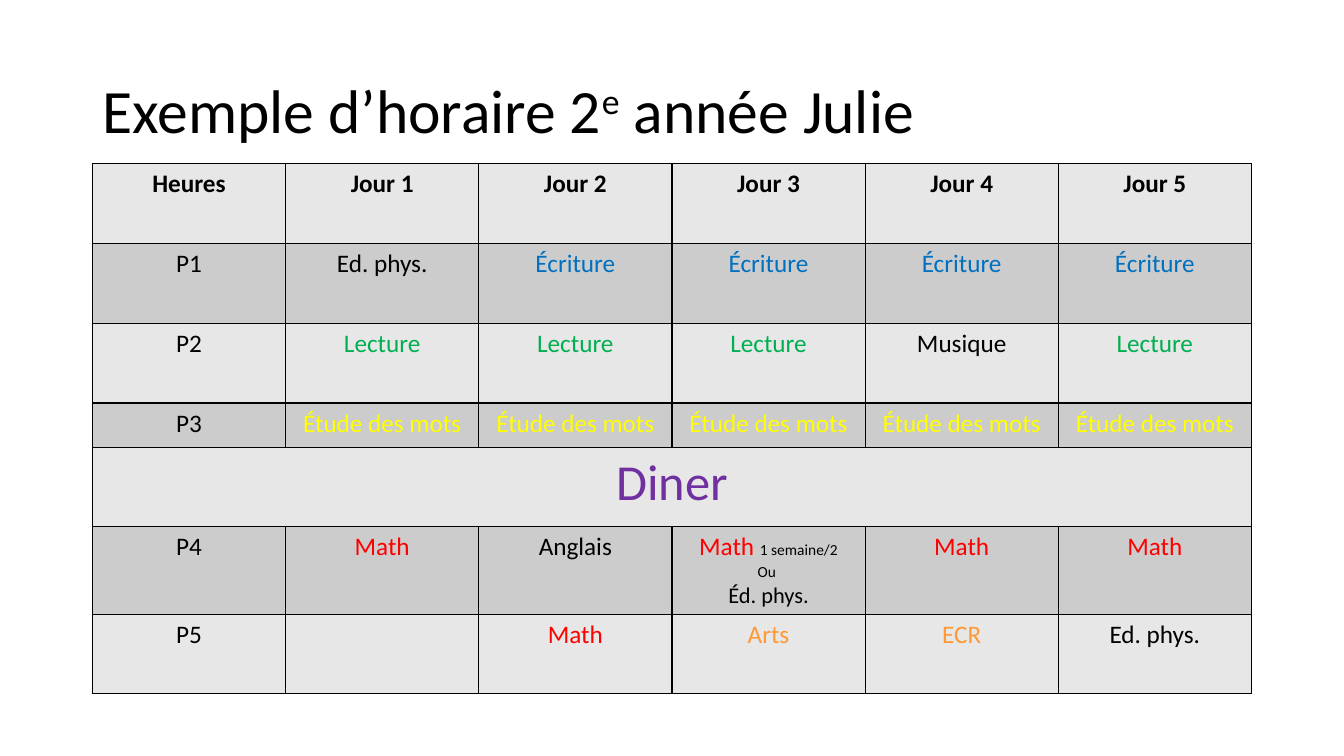
import pptx
import pptx.dml.color
import pptx.enum.text
import pptx.oxml
import pptx.oxml.ns
import pptx.util
from pptx.util import Cm

COLORS = {
    "black": "000000", "light": "E7E7E7", "dark": "CCCCCC",
    "blue": "0070C0", "green": "00B050", "yellow": "FFFF00",
    "purple": "7030A0", "red": "FF0000", "orange": "FF9933",
}
SUBJECT_COLORS = {
    "Écriture": "blue", "Lecture": "green", "Étude des mots": "yellow",
    "Diner": "purple", "Math": "red", "Arts": "orange", "ECR": "orange",
}
# A cell is a subject name, or a list of paragraphs made of (text, size, color) runs.
SHARED_PERIOD = [
    [("Math ", 18, "red"), ("1 semaine/2", 11, "black")],
    [("Ou ", 11, "black")],
    [("Éd. phys.", 16, "black")],
]
SCHEDULE = [
    ["Heures"] + [f"Jour {day}" for day in range(1, 6)],
    ["P1", "Ed. phys."] + ["Écriture"] * 4,
    ["P2"] + ["Lecture"] * 3 + ["Musique", "Lecture"],
    ["P3"] + ["Étude des mots"] * 5,
    ["Diner"],
    ["P4", "Math", "Anglais", SHARED_PERIOD, "Math", "Math"],
    ["P5", "", "Math", "Arts", "ECR", "Ed. phys."],
]
LUNCH_ROW = 4
ROW_HEIGHTS = [2.01, 2.01, 2.01, 1.11, 2.01, 2.01, 2.01]
LEFT, WIDTH = 2.33, 29.21


class ScheduleSlide:
    font = "Calibri"
    size = 18

    def __init__(self, prs):
        self.slide = prs.slides.add_slide(prs.slide_layouts[5])

    def run(self, p, text, size, color="black", bold=False):
        r = p.add_run()
        r.text = text
        r.font.name = self.font
        r.font.size = pptx.util.Pt(size)
        r.font.bold = bold
        r.font.color.rgb = pptx.dml.color.RGBColor.from_string(COLORS[color])
        return r

    def title(self, before, superscript, after):
        sp = self.slide.shapes.title
        sp.left, sp.top, sp.width, sp.height = Cm(LEFT), Cm(1.02), Cm(WIDTH), Cm(3.68)
        tf = sp.text_frame
        tf.word_wrap = True
        tf.auto_size = pptx.enum.text.MSO_AUTO_SIZE.NONE
        tf.vertical_anchor = pptx.enum.text.MSO_ANCHOR.MIDDLE
        p = tf.paragraphs[0]
        p.alignment = pptx.enum.text.PP_ALIGN.LEFT
        p.line_spacing = 0.9
        self.run(p, before, 44)
        r = self.run(p, superscript, 44)
        r.font._element.set("baseline", "30000")
        self.run(p, after, 44)

    def borders(self, cell):
        tc_pr = cell._tc.get_or_add_tcPr()
        for i, side in enumerate("LRTB"):
            tc_pr.insert(i, pptx.oxml.parse_xml(
                f'<a:ln{side} {pptx.oxml.ns.nsdecls("a")} w="12700"><a:solidFill>'
                f'<a:srgbClr val="{COLORS["black"]}"/></a:solidFill></a:ln{side}>'))

    def cell(self, cell, content, fill, size, bold):
        cell.fill.solid()
        cell.fill.fore_color.rgb = pptx.dml.color.RGBColor.from_string(COLORS[fill])
        self.borders(cell)
        if isinstance(content, str):
            color = SUBJECT_COLORS.get(content, "black")
            content = [[(content, size, color)]] if content else []
        tf = cell.text_frame
        for i, runs in enumerate(content):
            p = tf.add_paragraph() if i else tf.paragraphs[0]
            p.alignment = pptx.enum.text.PP_ALIGN.CENTER
            for text, run_size, color in runs:
                self.run(p, text, run_size, color, bold)

    def table(self, rows, heights, top):
        count = len(rows[0])
        table = self.slide.shapes.add_table(
            len(rows), count, Cm(LEFT), Cm(top), Cm(WIDTH), Cm(sum(heights))).table
        for column in table.columns:
            column.width = Cm(WIDTH / count)
        table.cell(LUNCH_ROW, 0).merge(table.cell(LUNCH_ROW, count - 1))
        for i, (row, height) in enumerate(zip(rows, heights)):
            table.rows[i].height = Cm(height)
            fill = "dark" if i % 2 else "light"
            size = 36 if i == LUNCH_ROW else self.size
            for j in range(count):
                content = row[j] if j < len(row) else ""
                self.cell(table.cell(i, j), content, fill, size, bold=i == 0)


def main():
    prs = pptx.Presentation()
    prs.slide_width, prs.slide_height = Cm(33.87), Cm(19.05)
    s = ScheduleSlide(prs)
    s.title("Exemple d’horaire 2", "e", " année Julie")
    s.table(SCHEDULE, ROW_HEIGHTS, top=4.13)
    prs.save("out.pptx")


if __name__ == "__main__":
    main()
